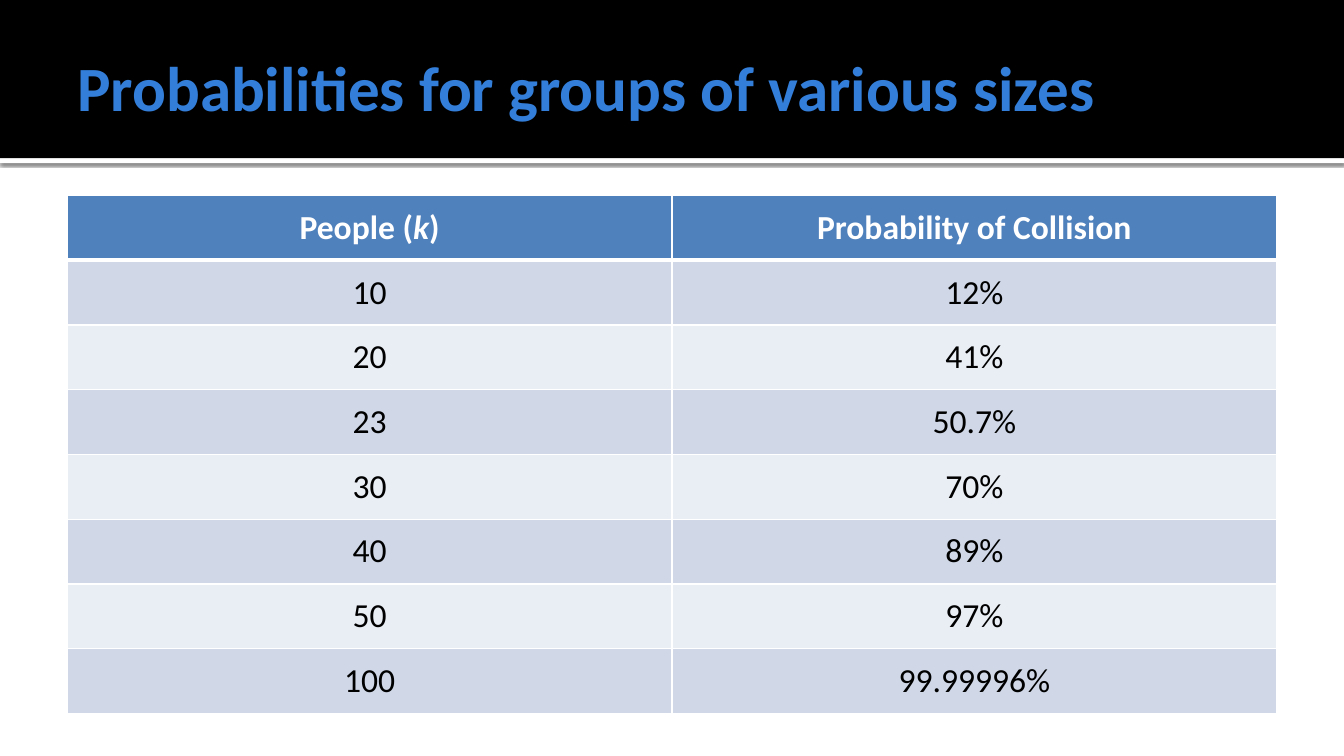
from lxml import etree
from pptx import Presentation
from pptx.dml.color import RGBColor
from pptx.enum.shapes import MSO_SHAPE
from pptx.enum.text import MSO_ANCHOR, PP_ALIGN
from pptx.oxml import parse_xml
from pptx.oxml.ns import nsdecls, qn
from pptx.util import Pt

RECTANGLE = MSO_SHAPE.RECTANGLE
MIDDLE = MSO_ANCHOR.MIDDLE
LEFT, CENTER = PP_ALIGN.LEFT, PP_ALIGN.CENTER

SLIDE_WIDTH, SLIDE_HEIGHT = 960, 540
HEADER_HEIGHT = 113
MARGIN = 48
CONTENT_WIDTH = SLIDE_WIDTH - 2 * MARGIN

HEADINGS = [
    [("People (", False), ("k", True), (")", False)],
    [("Probability of Collision", False)],
]
COLLISIONS = [
    ("10", "12%"),
    ("20", "41%"),
    ("23", "50.7%"),
    ("30", "70%"),
    ("40", "89%"),
    ("50", "97%"),
    ("100", "99.99996%"),
]


def rgb(value):
    return RGBColor.from_string(value)


def add_run(paragraph, text, size=24, color="000000", bold=False,
            italic=False, font="Calibri"):
    run = paragraph.add_run()
    run.text = text
    run.font.name = font
    run.font.size = Pt(size)
    run.font.bold = bold
    run.font.italic = italic
    run.font.color.rgb = rgb(color)


class SlideBuilder:
    white, black = "FFFFFF", "000000"
    title_color = "337ED9"
    heading_fill = "4F81BD"
    row_fills = ("D0D8E8", "E9EDF4")

    def __init__(self, slide):
        self.slide = slide

    def band(self, top, height, color):
        band = self.slide.shapes.add_shape(
            RECTANGLE, 0, Pt(top), Pt(SLIDE_WIDTH), Pt(height))
        band.fill.solid()
        band.fill.fore_color.rgb = rgb(color)
        band.line.fill.background()
        band.shadow.inherit = False
        return band

    def drop_shadow(self, shape, blur, distance, opacity):
        effects = shape.element.spPr.find(qn("a:effectLst"))
        effects.append(parse_xml(
            f'<a:outerShdw {nsdecls("a")} blurRad="{Pt(blur)}" '
            f'dist="{Pt(distance)}" dir="5400000" algn="t" rotWithShape="0">'
            f'<a:srgbClr val="{self.black}"><a:alpha val="{opacity * 1000}"/>'
            '</a:srgbClr></a:outerShdw>'))

    def title(self, text):
        title = self.slide.shapes.title
        title.left, title.top = Pt(MARGIN), Pt(12)
        title.width, title.height = Pt(CONTENT_WIDTH), Pt(99)
        frame = title.text_frame
        frame.vertical_anchor = MIDDLE
        frame.margin_left = Pt(7.2)
        frame.margin_right = frame.margin_top = frame.margin_bottom = Pt(3.6)
        frame.paragraphs[0].alignment = LEFT
        add_run(frame.paragraphs[0], text, size=45, bold=True,
                color=self.title_color)
        # Bring the title in front of the header band
        self.slide.shapes.element.append(title.element)

    def borders(self, cell, top, bottom):
        properties = cell._tc.get_or_add_tcPr()
        widths = {"lnL": 1, "lnR": 1, "lnT": top, "lnB": bottom}
        for position, (side, width) in enumerate(widths.items()):
            line = etree.Element(qn(f"a:{side}"), w=str(Pt(width)))
            fill = etree.SubElement(line, qn("a:solidFill"))
            etree.SubElement(fill, qn("a:srgbClr"), val=self.white)
            properties.insert(position, line)

    def cell(self, cell, runs, fill, top=1, bottom=1, **text_format):
        cell.fill.solid()
        cell.fill.fore_color.rgb = rgb(fill)
        cell.vertical_anchor = MIDDLE
        cell.margin_left = cell.margin_right = Pt(10.8)
        cell.margin_top = cell.margin_bottom = Pt(3.6)
        paragraph = cell.text_frame.paragraphs[0]
        paragraph.alignment = CENTER
        for text, italic in runs:
            add_run(paragraph, text, italic=italic, **text_format)
        self.borders(cell, top, bottom)

    def table(self, headings, rows, top, height):
        table = self.slide.shapes.add_table(
            len(rows) + 1, len(headings), Pt(MARGIN), Pt(top),
            Pt(CONTENT_WIDTH), Pt(height)).table
        for column, runs in enumerate(headings):
            self.cell(table.cell(0, column), runs, self.heading_fill,
                      bottom=3, color=self.white, bold=True)
        for number, values in enumerate(rows, start=1):
            fill = self.row_fills[(number - 1) % 2]
            for column, value in enumerate(values):
                self.cell(table.cell(number, column), [(value, False)], fill,
                          top=3 if number == 1 else 1)


def main():
    presentation = Presentation()
    presentation.slide_width = Pt(SLIDE_WIDTH)
    presentation.slide_height = Pt(SLIDE_HEIGHT)
    title_only = presentation.slide_layouts[5]
    builder = SlideBuilder(presentation.slides.add_slide(title_only))

    # Header
    header_edge = builder.band(HEADER_HEIGHT, 3.6, builder.white)
    builder.drop_shadow(header_edge, blur=2.5, distance=0.8, opacity=60)
    builder.band(0, HEADER_HEIGHT, builder.black)
    builder.title("Probabilities for groups of various sizes")

    # Collision table
    builder.table(HEADINGS, COLLISIONS, top=139.7, height=370)

    presentation.save("out.pptx")


if __name__ == "__main__":
    main()
